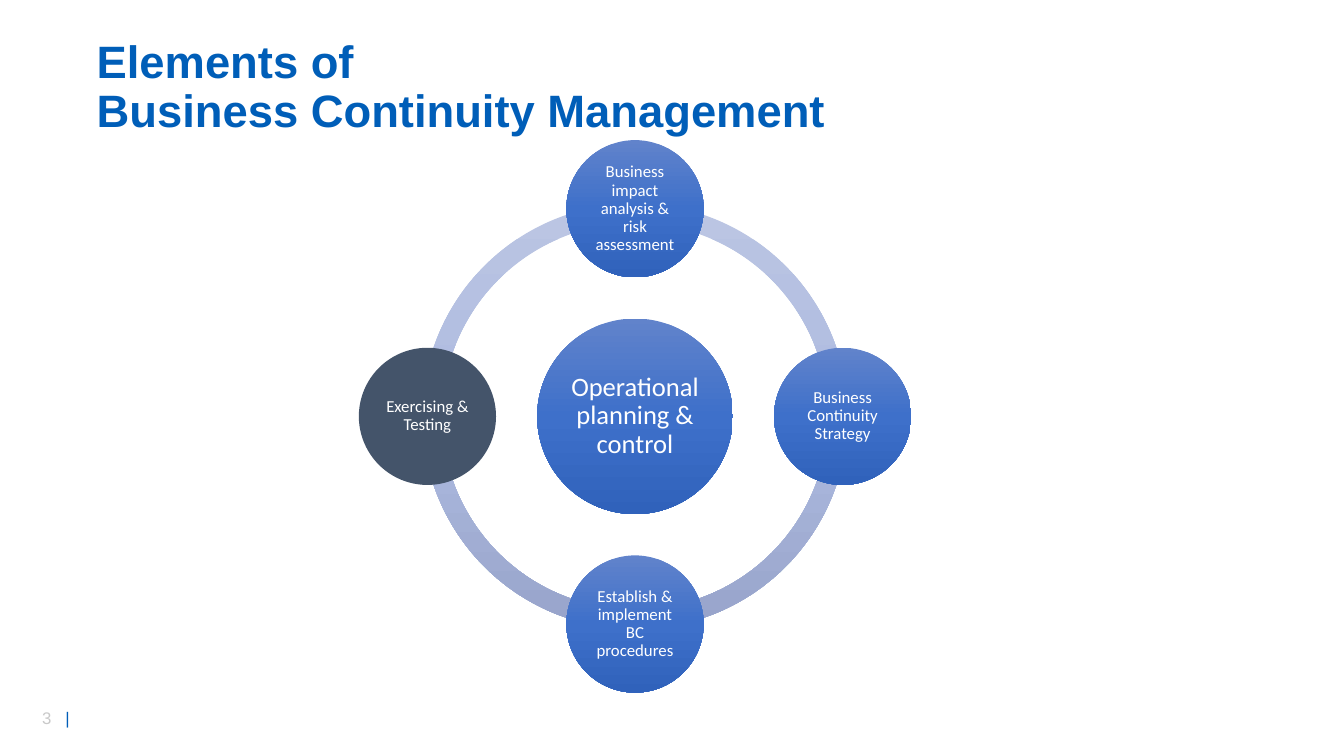
from copy import deepcopy
from math import cos, radians, sin

from lxml import etree
from pptx import Presentation, util as u
from pptx.dml.color import RGBColor
from pptx.enum import shapes, text
from pptx.oxml.ns import qn

BLUE = "005EB8"
WHITE = "FFFFFF"
RING_FILL = ("BBC5E3", "AEBBE0", "98A4CB")
CIRCLE_FILL = ("6183CB", "3E70CA", "3062BB")
SLATE_FILL = ("44546A",)

CENTER_X, CENTER_Y = 453.6, 297.4
RING_SIZE = 304
ORBIT = 148.3
HUB_SIZE = 139.7
ELEMENT_SIZE = 98

# Clockwise from the top
ELEMENTS = [
    ("Business impact analysis & risk assessment", CIRCLE_FILL),
    ("Business Continuity Strategy", CIRCLE_FILL),
    ("Establish & implement BC procedures", CIRCLE_FILL),
    ("Exercising & Testing", SLATE_FILL),
]


def rgb(value):
    return RGBColor.from_string(value)


def paint(shape, colors):
    """Fill with one solid colour, or with evenly spaced stops from top to bottom."""
    shape.shadow.inherit = False
    shape.line.fill.background()
    if len(colors) == 1:
        shape.fill.solid()
        shape.fill.fore_color.rgb = rgb(colors[0])
        return
    shape.fill.gradient()
    shape.fill.gradient_angle = 270
    stop_list = shape._element.spPr.find(qn("a:gradFill")).find(qn("a:gsLst"))
    while len(stop_list) < len(colors):
        stop_list.append(deepcopy(stop_list[0]))
    for index, (stop, color) in enumerate(zip(shape.fill.gradient_stops, colors)):
        stop.position = index / (len(colors) - 1)
        stop.color.rgb = rgb(color)


def write(frame, content, *, size, color, font="Arial", bold=False, align=text.PP_ALIGN.LEFT,
          anchor=text.MSO_ANCHOR.MIDDLE, spacing=1.0, inset=None, tab=None):
    """Write one paragraph; content is a string or a list of (string, colour) pairs."""
    frame.word_wrap = True
    frame.vertical_anchor = anchor
    if inset is not None:
        frame.margin_left = frame.margin_right = u.Pt(inset)
        frame.margin_top = frame.margin_bottom = u.Pt(inset)
    paragraph = frame.paragraphs[0]
    paragraph.alignment = align
    paragraph.line_spacing = spacing
    if tab:
        tabs = etree.SubElement(paragraph._p.get_or_add_pPr(), qn("a:tabLst"))
        etree.SubElement(tabs, qn("a:tab"), pos=str(u.Pt(tab)), algn="l")
    pieces = [(content, color)] if isinstance(content, str) else content
    for words, piece_color in pieces:
        for number, line in enumerate(words.split("\n")):
            if number:
                paragraph.add_line_break()
            run = paragraph.add_run()
            run.text = line
            run.font.name = font
            run.font.size = u.Pt(size)
            run.font.bold = bold
            run.font.color.rgb = rgb(piece_color)


def add_text(slide, left, top, width, height, content, **style):
    box = slide.shapes.add_textbox(u.Pt(left), u.Pt(top), u.Pt(width), u.Pt(height))
    write(box.text_frame, content, **style)


def add_centered(slide, kind, x, y, size, colors):
    shape = slide.shapes.add_shape(
        kind, u.Pt(x - size / 2), u.Pt(y - size / 2), u.Pt(size), u.Pt(size))
    paint(shape, colors)
    return shape


def add_ring_quarter(slide, start):
    arc = add_centered(slide, shapes.MSO_SHAPE.BLOCK_ARC, CENTER_X, CENTER_Y,
                       RING_SIZE, RING_FILL)
    # Angles are in units of 5/3 degree
    arc.adjustments[0] = start * 0.6
    arc.adjustments[1] = (start + 90) % 360 * 0.6
    arc.adjustments[2] = 0.046


def add_circle(slide, x, y, size, label, colors, text_size, inset):
    circle = add_centered(slide, shapes.MSO_SHAPE.OVAL, x, y, size, colors)
    write(circle.text_frame, label, size=text_size, color=WHITE, font="Calibri",
          align=text.PP_ALIGN.CENTER, spacing=0.9, inset=inset)


def main():
    deck = Presentation()
    deck.slide_width, deck.slide_height = u.Pt(960), u.Pt(540)
    slide = deck.slides.add_slide(deck.slide_layouts[6])

    add_text(slide, 23, 501.8, 51, 21.6, [("3\t", "C9C9C9"), ("|", BLUE)],
             size=12, color=BLUE, anchor=text.MSO_ANCHOR.TOP, tab=16.7)
    add_text(slide, 62, 26, 838, 74, "Elements of\nBusiness Continuity Management",
             size=32.4, color=BLUE, bold=True, spacing=0.9)

    for start in (180, 90, 0, 270):
        add_ring_quarter(slide, start)
    add_circle(slide, CENTER_X, CENTER_Y, HUB_SIZE, "Operational planning & control",
               CIRCLE_FILL, 19, 1.9)
    for index, (label, colors) in enumerate(ELEMENTS):
        angle = radians(index * 360 / len(ELEMENTS) - 90)
        add_circle(slide, CENTER_X + ORBIT * cos(angle), CENTER_Y + ORBIT * sin(angle),
                   ELEMENT_SIZE, label, colors, 12, 1.2)

    deck.save("out.pptx")


if __name__ == "__main__":
    main()
